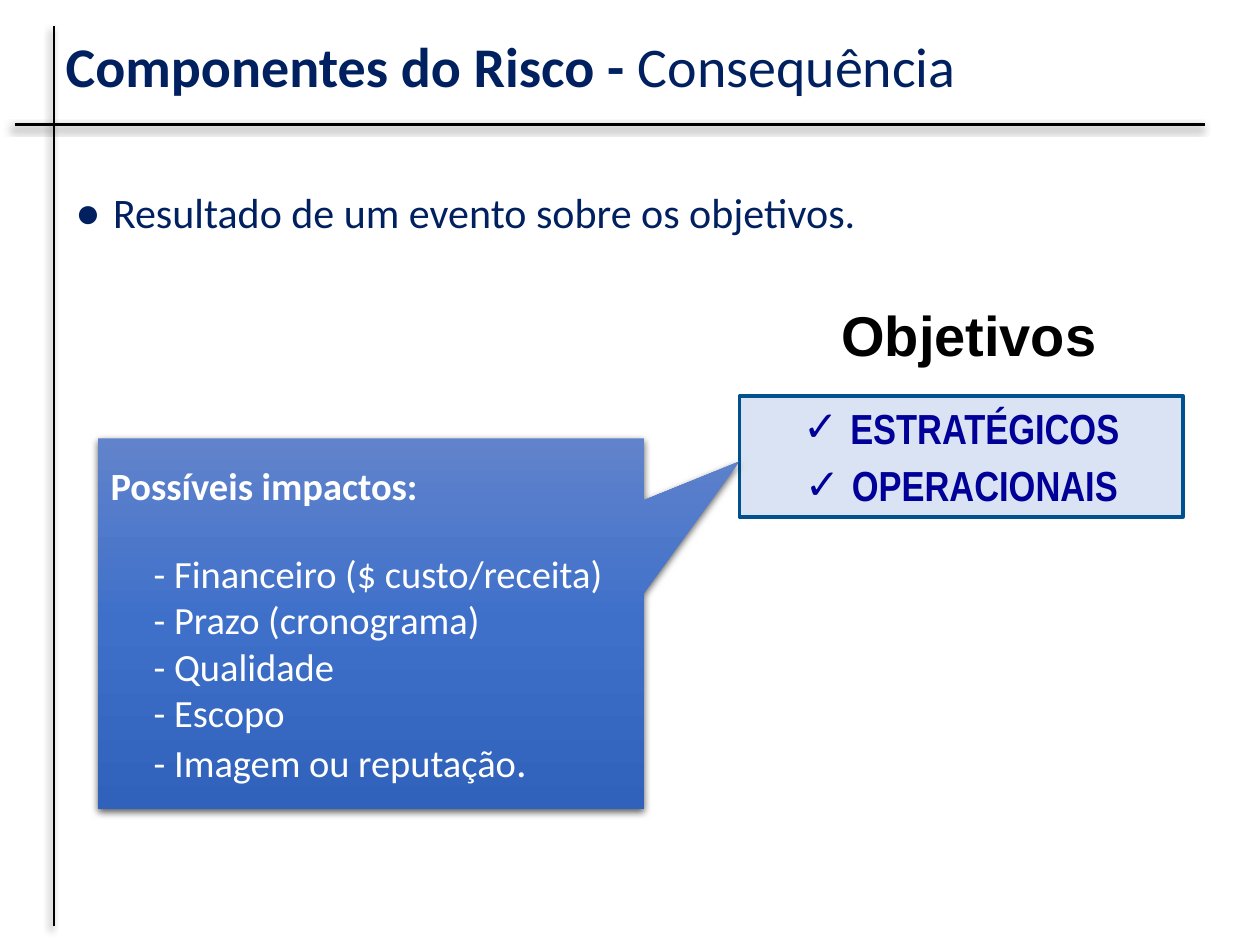
from copy import deepcopy
from dataclasses import dataclass

from lxml.etree import SubElement
from pptx import Presentation
from pptx.dml.color import RGBColor
from pptx.enum.shapes import MSO_CONNECTOR, MSO_SHAPE
from pptx.enum.text import MSO_ANCHOR, PP_ALIGN
from pptx.oxml.ns import qn
from pptx.util import Cm, Pt


@dataclass(frozen=True)
class Theme:
    navy: str = "002060"
    black: str = "000000"
    white: str = "FFFFFF"
    goal_text: str = "000099"
    goal_fill: str = "DAE3F3"
    goal_border: str = "00518E"
    impact_gradient: tuple = ("6183CB", "3E70CA", "3062BB")
    body_font: str = "Calibri"
    heading_font: str = "Arial"
    goal_font: str = "Arial Narrow"
    heading_size: int = 32
    body_size: int = 24
    impact_size: int = 22


THEME = Theme()


def rgb(color):
    return RGBColor.from_string(color)


def write(paragraph, text, size=THEME.body_size, color=THEME.navy,
          font=THEME.body_font, bold=False, align=PP_ALIGN.LEFT, line=None,
          before=0, after=0, indent=0, bullet=None):
    """Add a run to the paragraph and format both; indent is in cm."""
    paragraph.alignment = align
    paragraph.space_before, paragraph.space_after = Pt(before), Pt(after)
    if line:
        paragraph.line_spacing = line
    run = paragraph.add_run()
    run.text = text
    run.font.size, run.font.name, run.font.bold = Pt(size), font, bold
    run.font.color.rgb = rgb(color)
    properties = paragraph._p.get_or_add_pPr()
    if indent:
        properties.set("marL", str(Cm(indent)))
    if bullet:
        properties.set("indent", str(-Cm(indent)))
        SubElement(properties, qn("a:buFont"), typeface=THEME.heading_font)
        SubElement(properties, qn("a:buChar"), char=bullet)


def next_paragraph(frame, index):
    return frame.add_paragraph() if index else frame.paragraphs[0]


def add_shadow(part, opacity, blur, distance, angle):
    properties = part._element.spPr
    effects = properties.find(qn("a:effectLst"))
    if effects is None:
        effects = SubElement(properties, qn("a:effectLst"))
    shadow = SubElement(effects, qn("a:outerShdw"), blurRad=str(Pt(blur)),
                        dist=str(Pt(distance)), dir=str(angle * 60000),
                        algn="ctr", rotWithShape="0")
    color = SubElement(shadow, qn("a:srgbClr"), val=THEME.black)
    SubElement(color, qn("a:alpha"), val=str(opacity * 1000))


def add_text_area(slide, left, top, width, height, wrap=True):
    area = slide.shapes.add_textbox(Cm(left), Cm(top), Cm(width), Cm(height))
    area.text_frame.word_wrap = wrap
    return area.text_frame


def add_crossed_rules(slide, left, top, width, height, cross_x, cross_y):
    """Draw two rules that span the box and cross at the given offset."""
    for x1, y1, x2, y2 in (
        (left + cross_x, top, left + cross_x, top + height),
        (left, top + cross_y, left + width, top + cross_y),
    ):
        rule = slide.shapes.add_connector(
            MSO_CONNECTOR.STRAIGHT, Cm(x1), Cm(y1), Cm(x2), Cm(y2))
        rule.line.color.rgb = rgb(THEME.black)
        rule.line.width = Pt(1.5)
        add_shadow(rule, opacity=40, blur=4, distance=3, angle=135)


def place_title(slide, left, top, width, height, topic, aspect):
    title = slide.shapes.title
    title.left, title.top = Cm(left), Cm(top)
    title.width, title.height = Cm(width), Cm(height)
    frame = title.text_frame
    frame.vertical_anchor = MSO_ANCHOR.MIDDLE
    for text, bold in ((topic, True), (aspect, False)):
        write(frame.paragraphs[0], text, size=THEME.heading_size, bold=bold,
              line=0.9)


def add_definition(slide, left, top, width, height, text):
    frame = add_text_area(slide, left, top, width, height)
    write(frame.paragraphs[0], text, line=0.9, before=5.8, indent=0.76,
          bullet="●")


def add_goals(slide, left, top, width, height, heading, goals):
    """Put the heading in the upper part and the framed goals below it."""
    panel_height = 2.44
    heading_frame = add_text_area(slide, left + 1.78, top, 5.69, 1.63,
                                  wrap=False)
    write(heading_frame.paragraphs[0], heading, size=THEME.heading_size,
          color=THEME.black, font=THEME.heading_font, bold=True,
          align=PP_ALIGN.CENTER)
    panel = slide.shapes.add_shape(
        MSO_SHAPE.RECTANGLE, Cm(left), Cm(top + height - panel_height),
        Cm(width), Cm(panel_height))
    panel.shadow.inherit = False
    panel.fill.solid()
    panel.fill.fore_color.rgb = rgb(THEME.goal_fill)
    panel.line.color.rgb = rgb(THEME.goal_border)
    panel.line.width = Pt(2)
    frame = panel.text_frame
    frame.word_wrap = True
    frame.vertical_anchor = MSO_ANCHOR.TOP
    for index, goal in enumerate(goals):
        write(next_paragraph(frame, index), goal, color=THEME.goal_text,
              font=THEME.goal_font, bold=True, align=PP_ALIGN.CENTER,
              before=2, after=2, indent=0.95, bullet="✓")


def fill_with_gradient(shape, colors):
    shape.fill.gradient()
    shape.fill.gradient_angle = 270
    stop_list = shape._element.spPr.find(qn("a:gradFill")).find(qn("a:gsLst"))
    for _ in colors[2:]:
        stop_list.insert(1, deepcopy(stop_list[0]))
    for index, (stop, color) in enumerate(
            zip(shape.fill.gradient_stops, colors)):
        stop.position = index / (len(colors) - 1)
        stop.color.rgb = rgb(color)


def add_impacts(slide, left, top, width, height, heading, impacts):
    callout = slide.shapes.add_shape(
        MSO_SHAPE.RECTANGULAR_CALLOUT, Cm(left), Cm(top), Cm(width),
        Cm(height))
    callout.adjustments[0], callout.adjustments[1] = 0.675, -0.438
    callout.shadow.inherit = False
    fill_with_gradient(callout, THEME.impact_gradient)
    callout.line.fill.background()
    add_shadow(callout, opacity=63, blur=4.5, distance=1.5, angle=90)
    frame = callout.text_frame
    frame.word_wrap = True
    frame.vertical_anchor = MSO_ANCHOR.MIDDLE
    write(frame.paragraphs[0], heading, size=THEME.impact_size,
          color=THEME.white, bold=True, after=24)
    for impact in impacts:
        paragraph = frame.add_paragraph()
        write(paragraph, f"- {impact}", size=THEME.impact_size,
              color=THEME.white, indent=0.87)
    write(paragraph, ".", color=THEME.white, indent=0.87)


def main():
    deck = Presentation()
    deck.slide_width, deck.slide_height = Cm(25.4), Cm(19.05)
    slide = deck.slides.add_slide(deck.slide_layouts[5])
    add_crossed_rules(slide, 0.3, 0.53, 24, 18.14, cross_x=0.79, cross_y=1.98)
    place_title(slide, 1.07, 0.48, 22.86, 1.85,
                "Componentes do Risco - ", "Consequência")
    add_definition(slide, 1.27, 3.76, 23.34, 1.78,
                   "Resultado de um evento sobre os objetivos.")
    add_goals(slide, 14.91, 5.94, 8.94, 4.48, "Objetivos",
              ("ESTRATÉGICOS", "OPERACIONAIS"))
    add_impacts(slide, 1.98, 8.84, 11, 7.47, "Possíveis impactos:",
                ("Financeiro ($ custo/receita)", "Prazo (cronograma)",
                 "Qualidade", "Escopo", "Imagem ou reputação"))
    deck.save("out.pptx")


if __name__ == "__main__":
    main()
